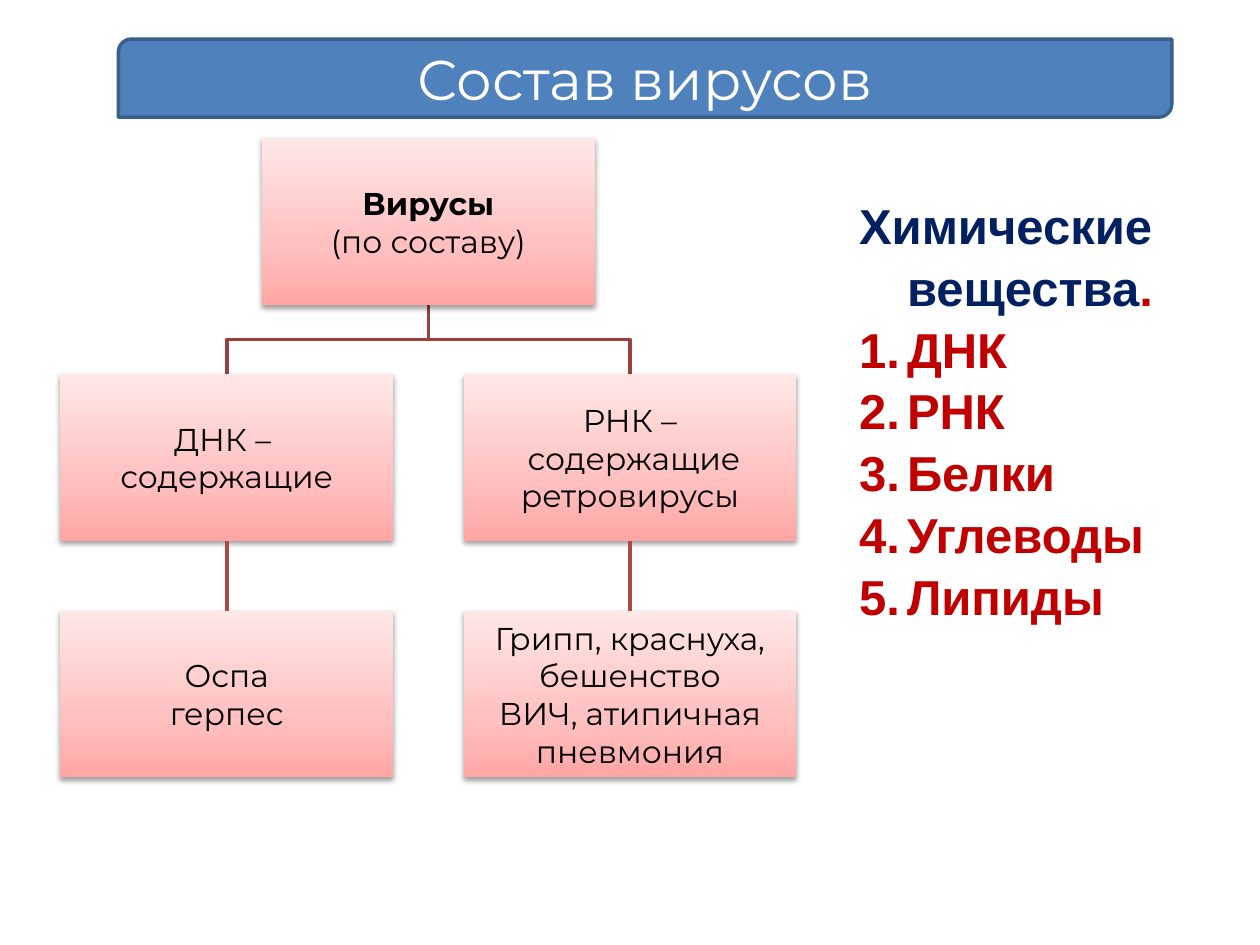
from lxml import etree
from pptx import Presentation
from pptx.dml.color import RGBColor
from pptx.enum import shapes, text
from pptx.oxml import parse_xml
from pptx.oxml.ns import nsdecls, qn
from pptx.util import Inches, Pt

WHITE = RGBColor(0xFF, 0xFF, 0xFF)
BLACK = RGBColor(0, 0, 0)
BLUE = RGBColor(0x4F, 0x81, 0xBD)
BLUE_EDGE = RGBColor(0x3A, 0x5F, 0x8C)
NAVY = RGBColor(0x00, 0x20, 0x60)
RED = RGBColor(0xC0, 0x00, 0x00)
ELBOW_RED = RGBColor(0x9A, 0x40, 0x3E)
LINK_RED = RGBColor(0xAE, 0x49, 0x46)

GRADIENT = f"""<a:gradFill {nsdecls('a')} rotWithShape="1"><a:gsLst>
<a:gs pos="0"><a:srgbClr val="FFA6A5"/></a:gs>
<a:gs pos="35000"><a:srgbClr val="FFC0BF"/></a:gs>
<a:gs pos="100000"><a:srgbClr val="FFE7E7"/></a:gs>
</a:gsLst><a:lin ang="16200000" scaled="0"/></a:gradFill>"""
SHADOW = f"""<a:outerShdw {nsdecls('a')} blurRad="40000" dist="20000"
dir="5400000" rotWithShape="0"><a:srgbClr val="000000">
<a:alpha val="38000"/></a:srgbClr></a:outerShdw>"""

BOX_W, BOX_H = 2.64, 1.32
LEFT_X, MIDDLE_X, RIGHT_X = 1.8, 3.4, 5.0
ROW_TOPS = [1.1, 2.97, 4.85]

deck = Presentation()
deck.slide_width, deck.slide_height = Inches(10), Inches(7.5)
page = deck.slides.add_slide(deck.slide_layouts[6])

# Branches from the root box, drawn first so that the boxes lie above them
root_bottom = ROW_TOPS[0] + BOX_H
bend = (root_bottom + ROW_TOPS[1]) / 2
for x in (RIGHT_X, LEFT_X):
    builder = page.shapes.build_freeform(Inches(MIDDLE_X), Inches(root_bottom))
    corners = [(MIDDLE_X, bend), (x, bend), (x, ROW_TOPS[1])]
    builder.add_line_segments([(Inches(a), Inches(b)) for a, b in corners], close=False)
    branch = builder.convert_to_shape()
    branch.shadow.inherit = False
    branch.fill.background()
    branch.line.color.rgb = ELBOW_RED
    branch.line.width = Pt(2)

# Tree boxes: centre, row, lines of text
tree = [
    (MIDDLE_X, 0, ["Вирусы", "(по составу)"]),
    (LEFT_X, 1, ["ДНК – ", "содержащие"]),
    (LEFT_X, 2, ["Оспа", "герпес"]),
    (RIGHT_X, 1, ["РНК –", " содержащие", "ретровирусы"]),
    (RIGHT_X, 2, ["Грипп, краснуха, бешенство", "ВИЧ, атипичная пневмония"]),
]
boxes = {}
for x, row, lines in tree:
    box = page.shapes.add_shape(
        shapes.MSO_SHAPE.RECTANGLE, Inches(x - BOX_W / 2), Inches(ROW_TOPS[row]),
        Inches(BOX_W), Inches(BOX_H))
    boxes[x, row] = box
    box.line.fill.background()
    box.shadow.inherit = False
    properties = box._element.spPr
    properties.find(qn("a:ln")).addprevious(parse_xml(GRADIENT))
    properties.find(qn("a:effectLst")).append(parse_xml(SHADOW))
    frame = box.text_frame
    frame.word_wrap = True
    frame.vertical_anchor = text.MSO_ANCHOR.MIDDLE
    frame.margin_left = frame.margin_right = Inches(0.01)
    frame.margin_top = frame.margin_bottom = Inches(0.01)
    frame.text = "\n".join(lines)
    for para in frame.paragraphs:
        para.alignment = text.PP_ALIGN.CENTER
        para.font.name = "Montserrat"
        para.font.size = Pt(18)
        para.font.color.rgb = BLACK
boxes[MIDDLE_X, 0].text_frame.paragraphs[0].font.bold = True

for x in (LEFT_X, RIGHT_X):
    link = page.shapes.add_connector(shapes.MSO_CONNECTOR.STRAIGHT, 0, 0, 0, 0)
    link.begin_connect(boxes[x, 1], 2)
    link.end_connect(boxes[x, 2], 0)
    link.line.color.rgb = LINK_RED
    link.line.width = Pt(2)
    etree.SubElement(link._element.spPr, qn("a:effectLst"))

# Title banner
banner = page.shapes.add_shape(
    shapes.MSO_SHAPE.ROUND_2_DIAG_RECTANGLE,
    Inches(0.94), Inches(0.31), Inches(8.36), Inches(0.62))
banner.shadow.inherit = False
banner.fill.solid()
banner.fill.fore_color.rgb = BLUE
banner.line.color.rgb = BLUE_EDGE
banner.line.width = Pt(2)
banner.text_frame.text = "Состав вирусов"
banner.text_frame.vertical_anchor = text.MSO_ANCHOR.MIDDLE
title = banner.text_frame.paragraphs[0]
title.alignment = text.PP_ALIGN.CENTER
title.font.name = "Montserrat"
title.font.size = Pt(32)
title.font.color.rgb = WHITE

# Numbered list of substances
substances = page.shapes.add_textbox(Inches(6.72), Inches(1.48), Inches(3.05), Inches(3.4))
frame = substances.text_frame
frame.word_wrap = True
frame.text = "\n".join(["Химические вещества", "ДНК", "РНК", "Белки", "Углеводы", "Липиды"])
heading = frame.paragraphs[0]
heading.add_run().text = "."
for para in frame.paragraphs:
    para.line_spacing = 1.05
    layout = para._p.get_or_add_pPr()
    layout.set("marL", str(Inches(0.38)))
    layout.set("indent", str(-Inches(0.38)))
    if para._p is not heading._p:
        etree.SubElement(layout, qn("a:buFont"), typeface="+mj-lt")
        etree.SubElement(layout, qn("a:buAutoNum"), type="arabicPeriod")
    for span in para.runs:
        span.font.name = "Arial"
        span.font.size = Pt(28)
        span.font.bold = True
        span.font.color.rgb = RED
heading.runs[0].font.color.rgb = NAVY

deck.save("out.pptx")
